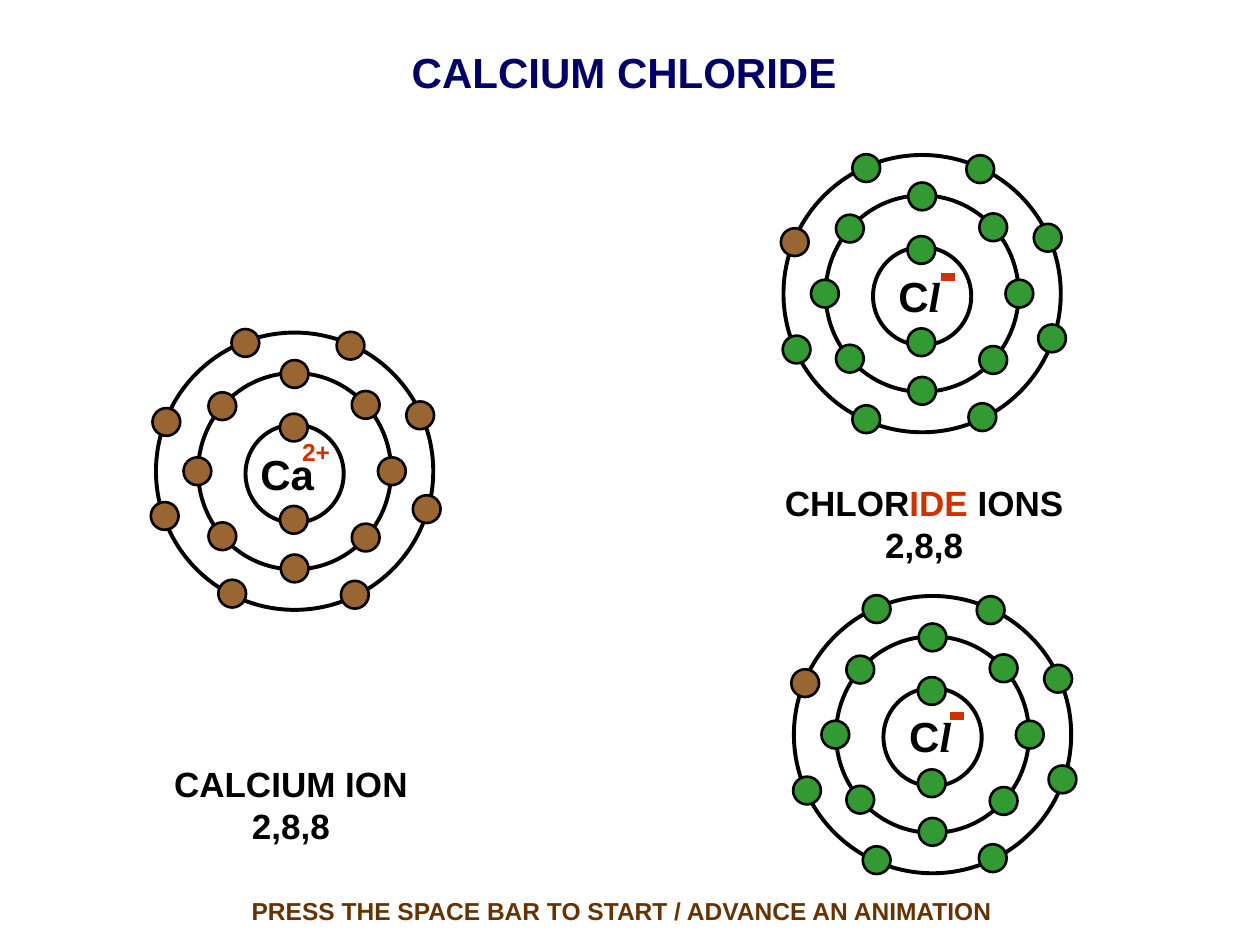
"""Build a slide of the electron shells in calcium chloride."""
from math import cos, radians, sin

from lxml import etree
from pptx import Presentation
from pptx.dml.color import RGBColor
from pptx.enum import shapes, text
from pptx.oxml import ns
from pptx.util import Cm, Pt

THEME = {
    "navy": RGBColor.from_string("000066"),
    "black": RGBColor.from_string("000000"),
    "red": RGBColor.from_string("CC3300"),
    "brown": RGBColor.from_string("663300"),
    "calcium": RGBColor.from_string("996633"),
    "chlorine": RGBColor.from_string("339933"),
    "large": Pt(24),
    "medium": Pt(20),
    "small": Pt(14),
    "ring": Pt(2.25),
    "rim": Pt(1.5),
    "minus": Pt(4.5),
}
BLACK = THEME["black"]
RED = THEME["red"]
SANS = {"name": "Arial", "bold": True, "italic": False}
SERIF = {"name": "Times New Roman", "bold": True, "italic": True}
ELECTRON = 0.56


def write(box, place, size, lines, align=text.PP_ALIGN.CENTER, wrap=True):
    box.left, box.top, box.width, box.height = map(Cm, place)
    frame_format = {
        "word_wrap": wrap,
        "auto_size": text.MSO_AUTO_SIZE.SHAPE_TO_FIT_TEXT,
        "vertical_anchor": text.MSO_ANCHOR.TOP,
    }
    for name, value in frame_format.items():
        setattr(box.text_frame, name, value)
    for number, line in enumerate(lines):
        para = box.text_frame.add_paragraph() if number else box.text_frame.paragraphs[0]
        para.alignment = align
        for words, color, face in line:
            span = para.add_run()
            span.text = words
            for name, value in {**face, "size": size}.items():
                setattr(span.font, name, value)
            span.font.color.rgb = color


def add_oval(page, center, width, height, weight, fill=None):
    x, y = center
    oval = page.shapes.add_shape(
        shapes.MSO_SHAPE.OVAL,
        Cm(x - width / 2), Cm(y - height / 2), Cm(width), Cm(height),
    )
    oval.shadow.inherit = False
    oval.line.color.rgb = BLACK
    oval.line.width = weight
    if fill is None:
        oval.fill.background()
    else:
        oval.fill.solid()
        oval.fill.fore_color.rgb = fill


deck = Presentation()
deck.slide_width, deck.slide_height = Cm(25.4), Cm(19.05)
page = deck.slides.add_slide(deck.slide_layouts[5])

write(page.shapes.title, (5.28, 0.81, 14.6, 1.27), THEME["large"],
      [[("CALCIUM CHLORIDE", THEME["navy"], SANS)]])

calcium_angles = (16, 64, 117, 161, 201, 249, 294, 336)
chloride_angles = (19, 64, 114, 156, 202, 246, 295, 336)
ions = [
    ((5.94, 9.5), "calcium", calcium_angles),
    ((18.59, 5.92), "chlorine", chloride_angles),
    ((18.8, 14.81), "chlorine", chloride_angles),
]
for (x, y), element, outer_angles in ions:
    shells = [
        (1.98, 1.98, 0.05, 0.93, (91, 269)),
        (3.89, 3.96, 0, 1.96, (0, 43, 90, 138, 180, 222, 270, 317)),
        (5.59, 5.59, 0, 2.77, outer_angles),
    ]
    for width, height, drop, orbit, angles in shells:
        add_oval(page, (x, y + drop), width, height, THEME["ring"])
        for angle in angles:
            turn = radians(angle)
            center = (x + orbit * cos(turn), y + drop + orbit * sin(turn))
            donor = "calcium" if angle == 202 else element
            add_oval(page, center, ELECTRON, ELECTRON, THEME["rim"], THEME[donor])

chloride_symbol = [[("C", BLACK, SANS), ("l", BLACK, SERIF)]]
symbols = [
    ((5, 8.92, 1.6, 1.27), "large", [[("Ca", BLACK, SANS)]], False),
    ((17.86, 5.33, 1.35, 1.27), "large", chloride_symbol, False),
    ((18.08, 14.2, 1.35, 1.27), "large", chloride_symbol, False),
    ((5.84, 8.69, 1.32, 0.84), "small", [[("2+", RED, SANS)]], True),
]
for place, size, lines, wrap in symbols:
    write(page.shapes.add_textbox(0, 0, 0, 0), place, THEME[size], lines,
          text.PP_ALIGN.LEFT, wrap)

configuration = [("2,8,8", BLACK, SANS)]
captions = [
    ((2.18, 15.24, 7.37, 1.96), "medium",
     [[("CALCIUM ION", BLACK, SANS)], configuration]),
    ((14.68, 9.58, 7.9, 1.96), "medium",
     [[("CHLOR", BLACK, SANS), ("IDE", RED, SANS), (" IONS", BLACK, SANS)],
      configuration]),
    ((3.15, 17.93, 18.77, 0.84), "small",
     [[("PRESS THE SPACE BAR TO START / ADVANCE AN ANIMATION",
        THEME["brown"], SANS)]]),
]
for place, size, lines in captions:
    write(page.shapes.add_textbox(0, 0, 0, 0), place, THEME[size], lines)

for x, y in ((18.97, 5.59), (19.15, 14.43)):
    minus = page.shapes.add_connector(
        shapes.MSO_CONNECTOR.STRAIGHT, Cm(x), Cm(y), Cm(x + 0.28), Cm(y))
    minus.line.color.rgb = RED
    minus.line.width = THEME["minus"]
    etree.SubElement(minus._element.spPr, ns.qn("a:effectLst"))

deck.save("out.pptx")
